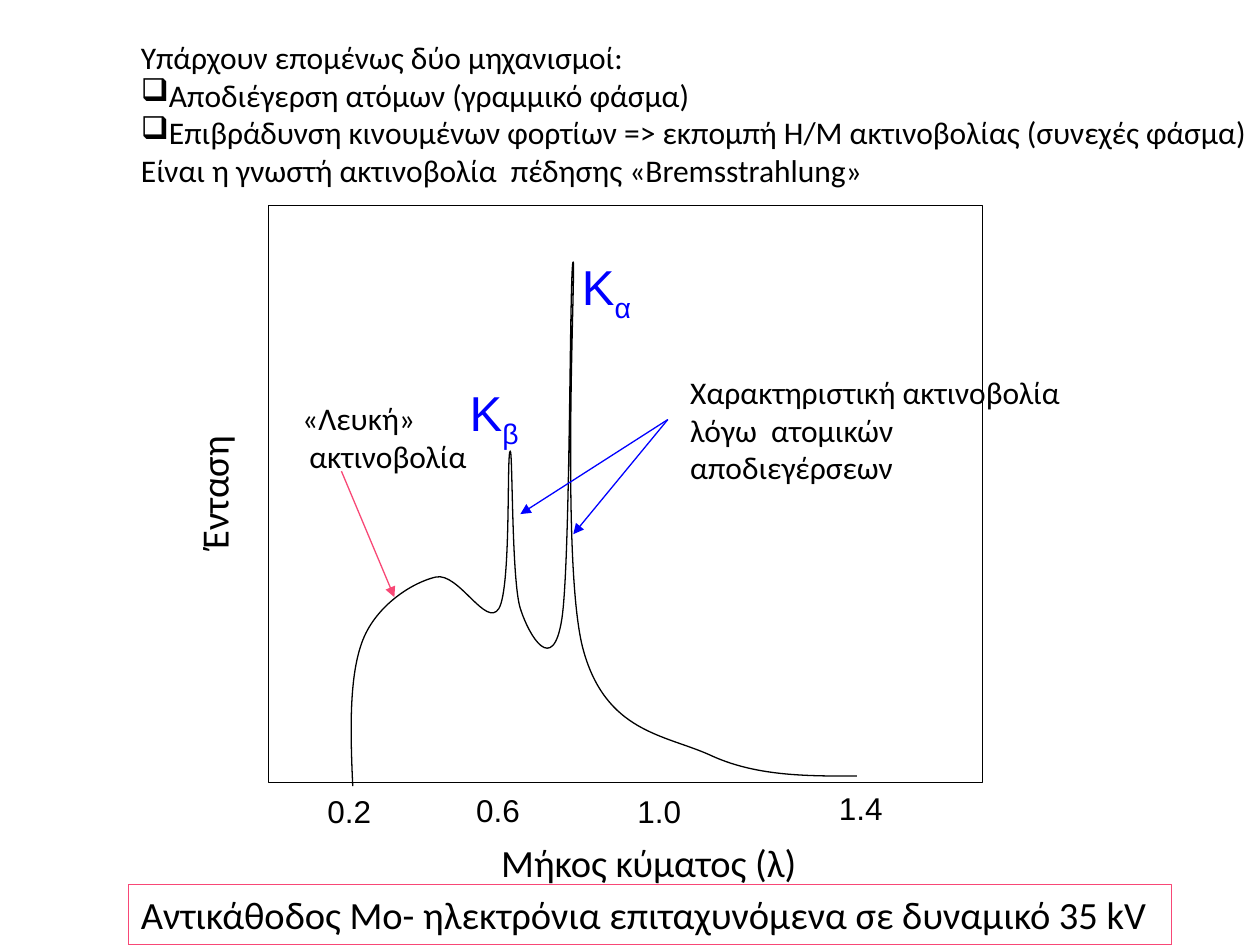
from dataclasses import dataclass

from lxml.etree import SubElement
from pptx import Presentation
from pptx.dml.color import RGBColor
from pptx.enum.shapes import MSO_CONNECTOR as Connector, MSO_SHAPE as Shape
from pptx.oxml.ns import qn
from pptx.util import Inches, Pt

BLACK = RGBColor(0x00, 0x00, 0x00)
BLUE = RGBColor(0x00, 0x00, 0xFF)
PINK = RGBColor(0xF8, 0x48, 0x76)
LINE_WIDTH = Pt(0.75)
BULLET = "❑"


@dataclass
class Label:
    left: float
    top: float
    width: float
    height: float
    lines: tuple[str, ...]
    size: int = 18
    font: str = "Calibri"
    color: RGBColor = BLACK
    subscript: str = ""
    bulleted: tuple[int, ...] = ()
    rotation: int = 0
    wrap: bool = False
    border: RGBColor | None = None


@dataclass
class Arrow:
    start: tuple[float, float]
    end: tuple[float, float]
    color: RGBColor


def tick(left: float, top: float, value: str) -> Label:
    return Label(left, top, 0.55, 0.4, (value,), font="Arial")


def peak(left: float, top: float, subscript: str) -> Label:
    return Label(left, top, 0.6, 0.57, ("K",), 28, "Arial", BLUE, subscript)


LABELS = [
    Label(1.02, 7.02, 8.28, 0.48,
          ("Αντικάθοδος Mo- ηλεκτρόνια επιταχυνόμενα σε δυναμικό 35 kV",),
          size=22, border=PINK),
    Label(1.11, 3.64, 1.17, 0.47, ("Ένταση",), size=22, rotation=270),
    Label(3.88, 6.61, 2.63, 0.47, ("Μήκος κύματος (λ)",), size=22),
    tick(2.5, 6.24, "0.2"),
    tick(3.68, 6.23, "0.6"),
    tick(4.96, 6.24, "1.0"),
    tick(6.56, 6.21, "1.4"),
    Label(2.3, 3.12, 1.51, 0.71, ("«Λευκή»", " ακτινοβολία")),
    Label(5.38, 2.91, 3.3, 1.01,
          ("Χαρακτηριστική ακτινοβολία", "λόγω  ατομικών αποδιεγέρσεων"), wrap=True),
    peak(3.63, 2.99, "β"),
    peak(4.52, 1.99, "α"),
    Label(1.02, 0.25, 9.04, 1.31,
          ("Υπάρχουν επομένως δύο μηχανισμοί:",
           "Αποδιέγερση ατόμων (γραμμικό φάσμα)",
           "Επιβράδυνση κινουμένων φορτίων => εκπομπή Η/Μ ακτινοβολίας (συνεχές φάσμα)",
           "Είναι η γνωστή ακτινοβολία  πέδησης «Bremsstrahlung»"),
          bulleted=(1, 2)),
]

ARROWS = [
    Arrow((2.71, 3.74), (3.13, 4.74), PINK),
    Arrow((5.3, 3.33), (4.13, 4.08), BLUE),
    Arrow((5.3, 3.33), (4.55, 4.24), BLUE),
]

# Start point, then two control points and an end point per Bezier segment
SPECTRUM = [
    (2.8, 6.24),
    (2.78, 5.8), (2.77, 5.36), (2.88, 5.08),
    (2.99, 4.8), (3.28, 4.62), (3.46, 4.58),
    (3.64, 4.54), (3.86, 4.99), (3.96, 4.83),
    (4.06, 4.66), (4.02, 3.58), (4.05, 3.58),
    (4.07, 3.58), (4.06, 4.61), (4.13, 4.83),
    (4.2, 5.05), (4.39, 5.37), (4.46, 4.91),
    (4.53, 4.45), (4.52, 2.04), (4.55, 2.08),
    (4.57, 2.12), (4.45, 4.51), (4.63, 5.16),
    (4.81, 5.81), (5.27, 5.83), (5.63, 5.99),
    (5.99, 6.16), (6.39, 6.16), (6.8, 6.16),
]


def set_outline(sp, color: RGBColor) -> None:
    sp.fill.background()
    sp.line.color.rgb = color
    sp.line.width = LINE_WIDTH


def add_run(p, text: str, label: Label):
    r = p.add_run()
    r.text = text
    r.font.size = Pt(label.size)
    r.font.name = label.font
    r.font.color.rgb = label.color
    return r


def add_label(s, label: Label) -> None:
    sp = s.shapes.add_textbox(Inches(label.left), Inches(label.top),
                              Inches(label.width), Inches(label.height))
    sp.rotation = label.rotation
    if label.border is not None:
        set_outline(sp, label.border)
    tf = sp.text_frame
    tf.word_wrap = label.wrap
    for i, line in enumerate(label.lines):
        p = tf.paragraphs[0] if i == 0 else tf.add_paragraph()
        add_run(p, line, label)
        if i in label.bulleted:
            SubElement(p._p.get_or_add_pPr(), qn("a:buChar"), char=BULLET)
    if label.subscript:
        r = add_run(p, label.subscript, label)
        r._r.get_or_add_rPr().set("baseline", "-25000")


def add_arrow(s, arrow: Arrow) -> None:
    x1, y1, x2, y2 = map(Inches, arrow.start + arrow.end)
    line = s.shapes.add_connector(Connector.STRAIGHT, x1, y1, x2, y2)
    line.line.color.rgb = arrow.color
    line.line.width = LINE_WIDTH
    SubElement(line.line._get_or_add_ln(), qn("a:tailEnd"), type="triangle")
    SubElement(line._element.spPr, qn("a:effectLst"))


def add_curve(s, points: list[tuple[float, float]]) -> None:
    """Draw a polyline, then join every three of its segments into one Bezier."""
    (x, y), *rest = [(Inches(px), Inches(py)) for px, py in points]
    builder = s.shapes.build_freeform(x, y)
    builder.add_line_segments(rest, close=False)
    sp = builder.convert_to_shape()
    sp.shadow.inherit = False
    set_outline(sp, BLACK)
    path = next(sp._element.iter(qn("a:path")))
    segments = path.findall(qn("a:lnTo"))
    for i in range(0, len(segments), 3):
        bezier = SubElement(path, qn("a:cubicBezTo"))
        for segment in segments[i:i + 3]:
            bezier.append(segment[0])
            path.remove(segment)


def main() -> None:
    prs = Presentation()
    prs.slide_width, prs.slide_height = Inches(10), Inches(7.5)
    s = prs.slides.add_slide(prs.slide_layouts[6])

    frame = s.shapes.add_shape(Shape.RECTANGLE, Inches(2.13), Inches(1.63),
                               Inches(5.67), Inches(4.58))
    frame.shadow.inherit = False
    set_outline(frame, BLACK)
    add_curve(s, SPECTRUM)
    for arrow in ARROWS:
        add_arrow(s, arrow)
    for label in LABELS:
        add_label(s, label)
    prs.save("out.pptx")


if __name__ == "__main__":
    main()
